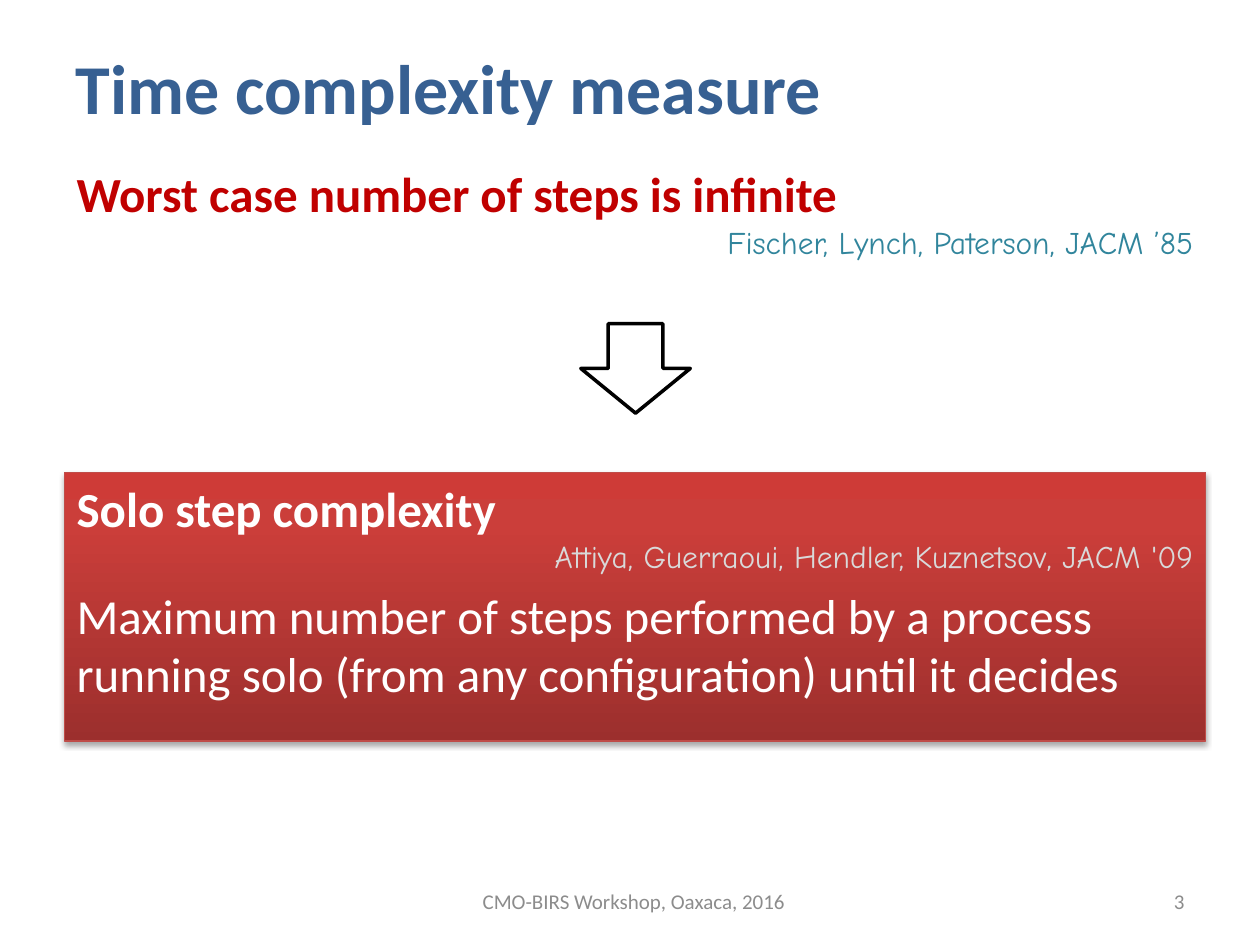
from copy import deepcopy
from dataclasses import dataclass

from lxml.etree import SubElement
from pptx import Presentation
from pptx.dml.color import RGBColor
from pptx.enum.shapes import MSO_SHAPE
from pptx.enum.text import MSO_ANCHOR, MSO_AUTO_SIZE, PP_ALIGN
from pptx.oxml.ns import qn
from pptx.util import Pt


@dataclass(frozen=True)
class Theme:
    sans: str = "Calibri"
    hand: str = "Comic Neue"
    blue: str = "376092"
    red: str = "C00000"
    teal: str = "31859C"
    white: str = "FFFFFF"
    pale: str = "D9D9D9"
    gray: str = "8C8C8C"
    black: str = "000000"
    edge: str = "BF4C48"
    ramp: tuple = ((0, "9C2F2D"), (0.8, "CB3E3A"), (1, "CE3B37"))
    title: int = 40
    body: int = 28
    cite: int = 18
    foot: int = 12


@dataclass(frozen=True)
class Box:
    left: float
    top: float
    width: float
    height: float

    def place(self) -> tuple:
        return Pt(self.left), Pt(self.top), Pt(self.width), Pt(self.height)


@dataclass(frozen=True)
class Claim:
    head: str
    cite: str
    ink: str
    soft: str
    note: str = ""


THEME = Theme()
LEFT, WIDE = 36.7, 652.3


def rgb(code: str) -> RGBColor:
    return RGBColor.from_string(code)


def write(frame, text: str, *, size: int, color: str, font: str = THEME.sans,
          bold: bool = False, align=PP_ALIGN.LEFT, before: float = 0,
          anchor=MSO_ANCHOR.TOP) -> None:
    """Add one paragraph, filling the first one if it is still empty."""
    frame.word_wrap = True
    frame.auto_size = MSO_AUTO_SIZE.NONE
    frame.vertical_anchor = anchor
    para = frame.paragraphs[0]
    if para.runs:
        para = frame.add_paragraph()
    para.alignment = align
    para.space_before = Pt(before)
    run = para.add_run()
    run.text = text
    run.font.name, run.font.size, run.font.bold = font, Pt(size), bold
    run.font.color.rgb = rgb(color)


def state(frame, claim: Claim) -> None:
    """Write a heading, its citation and an optional explanation."""
    write(frame, claim.head, size=THEME.body, color=claim.ink, bold=True)
    write(frame, claim.cite, size=THEME.cite, color=claim.soft,
          font=THEME.hand, align=PP_ALIGN.RIGHT)
    if claim.note:
        write(frame, claim.note, size=THEME.body, color=claim.ink,
              before=THEME.body * 0.2)


def shade(shape) -> None:
    """Fill with the theme's ramp, rising from the bottom edge."""
    shape.fill.gradient()
    shape.fill.gradient_angle = 90
    stops = shape.fill.gradient_stops
    last = shape._element.spPr.find(".//" + qn("a:gsLst"))[-1]
    last.addnext(deepcopy(last))
    stops = shape.fill.gradient_stops
    for stop, (pos, code) in zip(stops, THEME.ramp):
        stop.position = pos
        stop.color.rgb = rgb(code)


def drop(shape) -> None:
    """Cast a soft shadow straight down."""
    shape.shadow.inherit = False
    effects = shape._element.spPr.find(qn("a:effectLst"))
    cast = SubElement(effects, qn("a:outerShdw"), blurRad=str(Pt(3.1)),
                      dist=str(Pt(1.8)), dir="5400000", rotWithShape="0")
    tint = SubElement(cast, qn("a:srgbClr"), val=THEME.black)
    SubElement(tint, qn("a:alpha"), val="35000")


def outline(slide, kind, box: Box, color: str, width: float):
    shape = slide.shapes.add_shape(kind, *box.place())
    shape.shadow.inherit = False
    shape.fill.background()
    shape.line.color.rgb = rgb(color)
    shape.line.width = Pt(width)
    return shape


def main() -> None:
    deck = Presentation()
    deck.slide_width, deck.slide_height = Pt(720), Pt(540)
    slide = deck.slides.add_slide(deck.slide_layouts[5])

    # Title
    title = slide.shapes.title
    title.left, title.top, title.width, title.height = Box(
        36, 21.6, 607.7, 86.4).place()
    write(title.text_frame, "Time complexity measure", size=THEME.title,
          color=THEME.blue, bold=True)

    # Known result
    body = slide.shapes.add_textbox(*Box(LEFT, 90, WIDE, 365.8).place())
    state(body.text_frame, Claim(
        "Worst case number of steps is infinite",
        "Fischer, Lynch, Paterson, JACM ’85", THEME.red, THEME.teal))

    # Measure used instead
    panel = outline(slide, MSO_SHAPE.RECTANGLE, Box(LEFT, 270, WIDE, 153.4),
                    THEME.edge, 0.75)
    shade(panel)
    drop(panel)
    state(panel.text_frame, Claim(
        "Solo step complexity",
        "Attiya, Guerraoui, Hendler, Kuznetsov, JACM '09",
        THEME.white, THEME.pale,
        "Maximum number of steps performed by a process running solo "
        "(from any configuration) until it decides"))

    # Arrow between the two
    outline(slide, MSO_SHAPE.DOWN_ARROW, Box(331.9, 185, 62.6, 51.1),
            THEME.black, 2)

    # Footer
    for text, left, width, align in (
            ("3", 516.2, 167.8, PP_ALIGN.RIGHT),
            ("CMO-BIRS Workshop, Oaxaca, 2016", 172.1, 380.2,
             PP_ALIGN.CENTER)):
        foot = slide.shapes.add_textbox(*Box(left, 500.4, width, 28.8).place())
        write(foot.text_frame, text, size=THEME.foot, color=THEME.gray,
              align=align, anchor=MSO_ANCHOR.MIDDLE)

    deck.save("out.pptx")


if __name__ == "__main__":
    main()
